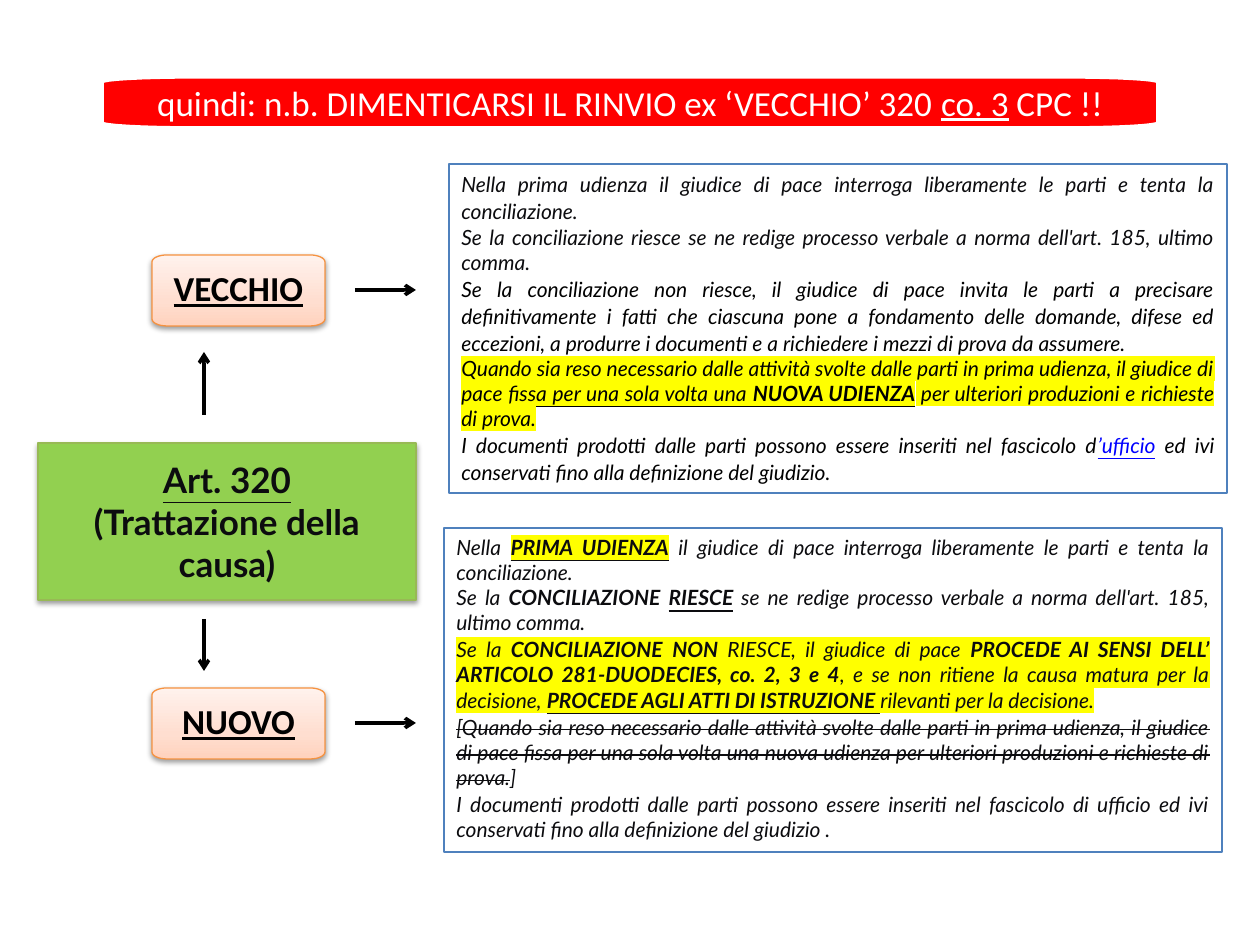
import math
from lxml import etree
from pptx import Presentation
from pptx import util as u
from pptx.dml.color import RGBColor
from pptx.enum import shapes, text
from pptx.oxml import parse_xml
from pptx.oxml.ns import qn

PX = 914400 // 126
NS = 'xmlns:a="http://schemas.openxmlformats.org/drawingml/2006/main"'
C = dict(red="FF0000", white="FFFFFF", black="000000", ink="0C0C0F", link="0000FF",
         yellow="FFFF00", blue="4F81BD", green="92D050", green_line="98B955",
         orange="F69240")
PEACH = [(0, "FFD2BD"), (35, "FFDED0"), (100, "FFF2ED")]

# Content: a run is (text, flags); b bold, i italic, u underline, s strike,
# h highlight, k black, l link colour
TITLE = [("quindi: n.b. DIMENTICARSI IL RINVIO ex ‘VECCHIO’ 320 ", ""),
         ("co. 3", "u"), (" CPC !!", "")]
ARTICLE = [("Art. 320", "bu"), ("\n", "b"), ("(Trattazione della causa)", "b")]
# A paragraph is (line spacing, points after, runs)
OLD_TEXT = [
    (1.07, 0, [("Nella prima udienza il giudice di pace interroga liberamente le parti "
                "e tenta la conciliazione.", "i")]),
    (1, 0, [("Se la conciliazione riesce se ne redige processo verbale a norma "
             "dell'art. 185, ultimo comma.", "i")]),
    (1.07, 0, [("Se la conciliazione non riesce, il giudice di pace invita le parti a "
                "precisare definitivamente i fatti che ciascuna pone a fondamento delle "
                "domande, difese ed eccezioni, a produrre i documenti e a richiedere i "
                "mezzi di prova da assumere.", "ik")]),
    (1, 0, [("Quando sia reso necessario dalle attività svolte dalle parti in prima "
             "udienza, il giudice di pace ", "ikh"),
            ("fissa per una sola volta una ", "ikhu"), ("NUOVA UDIENZA", "ikhub"),
            (" ", "ikhb"), ("per ulteriori produzioni e richieste di prova.", "ikh")]),
    (1.07, 0, [("I documenti prodotti dalle parti possono essere inseriti nel "
                "fascicolo d", "ik"), ("’ufficio", "ilu"),
               (" ed ivi conservati fino alla definizione del giudizio.", "ik")]),
]
NEW_TEXT = [
    (1, 0, [("Nella ", "i"), ("PRIMA UDIENZA", "ibuh"),
            (" il giudice di pace interroga liberamente le parti e tenta la "
             "conciliazione.", "i")]),
    (1, 1, [("Se la ", "i"), ("CONCILIAZIONE ", "ib"), ("RIESCE", "ibu"), (" ", "ib"),
            ("se ne redige processo verbale a norma dell'art. 185, ultimo comma.", "i")]),
    (1, 1, [("Se la ", "ih"), ("CONCILIAZIONE", "ihb"), (" ", "ih"), ("NON", "ihbu"),
            (" RIESCE, il giudice di pace ", "ih"),
            ("PROCEDE AI SENSI DELL’ ARTICOLO 281-DUODECIES, co. 2, 3 e 4", "ihbu"),
            (", e se non ritiene la causa matura per la decisione, ", "ih"),
            ("PROCEDE AGLI ATTI DI ISTRUZIONE ", "ihbu"),
            ("rilevanti per la decisione.", "ih")]),
    (1, 1, [("[Quando sia reso necessario dalle attività svolte dalle parti in prima "
             "udienza, il giudice di pace fissa per una sola volta una nuova udienza per "
             "ulteriori produzioni e richieste di prova.", "is"), ("]", "i")]),
    (1, 1, [("I documenti prodotti dalle parti possono essere inseriti nel fascicolo di "
             "ufficio ed ivi conservati fino alla definizione del giudizio .", "i")]),
]

# Places in pixels
TITLE_BOX = (102, 77, 1056, 51)
ARTICLE_BOX = (38, 443, 378, 157)
PANELS = [((444, 528, 778, 324), NEW_TEXT), ((449, 164, 778, 329), OLD_TEXT)]
LABELS = [("VECCHIO", 255), ("NUOVO", 688)]
LABEL_X, LABEL_W, LABEL_H = 152, 173, 71
ARROWS = [((204, 619), (204, 671)), ((204, 415), (204, 352))]
ARROWS += [((355, y + LABEL_H // 2), (416, y + LABEL_H // 2)) for _, y in LABELS]

prs = Presentation()
prs.slide_width, prs.slide_height = 1260 * PX, 945 * PX
s = prs.slides.add_slide(prs.slide_layouts[6])


def rgb(name):
    return RGBColor.from_string(C[name])


def write(sp, paragraphs, size=20, font="Calibri", color="black", align="CENTER",
          anchor="MIDDLE", inset=None, grow=False):
    tf = sp.text_frame
    tf.word_wrap = True
    tf.vertical_anchor = text.MSO_ANCHOR[anchor]
    if grow:
        tf.auto_size = text.MSO_AUTO_SIZE.SHAPE_TO_FIT_TEXT
    if inset:
        tf.margin_left = tf.margin_right = tf.margin_top = tf.margin_bottom = inset * PX
    for n, (spacing, after, runs) in enumerate(paragraphs):
        p = tf.add_paragraph() if n else tf.paragraphs[0]
        p.alignment = text.PP_ALIGN[align]
        p.line_spacing, p.space_after = spacing, u.Pt(after)
        for words, flags in runs:
            if words == "\n":
                p.add_line_break()
                continue
            r = p.add_run()
            r.text = words
            f = r.font
            f.size, f.name = u.Pt(size), font
            f.bold, f.italic, f.underline = "b" in flags, "i" in flags, "u" in flags
            f.color.rgb = rgb("link" if "l" in flags else "black" if "k" in flags else color)
            rpr = r._r.get_or_add_rPr()
            if "s" in flags:
                rpr.set("strike", "sngStrike")
            if "h" in flags:
                rpr.find(qn("a:latin")).addprevious(parse_xml(
                    f'<a:highlight {NS}><a:srgbClr val="{C["yellow"]}"/></a:highlight>'))


def paint(sp, line, width=0.75, fill=None, gradient=None, shadow=False):
    sp.fill.background()
    if fill:
        sp.fill.solid()
        sp.fill.fore_color.rgb = rgb(fill)
    sp.line.color.rgb, sp.line.width = rgb(line), u.Pt(width)
    sp.shadow.inherit = False
    pr = sp._element.spPr
    if gradient:
        stops = "".join(f'<a:gs pos="{pos * 1000}"><a:srgbClr val="{c}"/></a:gs>'
                        for pos, c in gradient)
        pr.replace(pr.find(qn("a:noFill")), parse_xml(
            f'<a:gradFill {NS} rotWithShape="1"><a:gsLst>{stops}</a:gsLst>'
            '<a:lin ang="16200000" scaled="0"/></a:gradFill>'))
    if shadow:
        pr.find(qn("a:effectLst")).append(parse_xml(
            f'<a:outerShdw {NS} blurRad="40000" dist="20000" dir="5400000" '
            f'rotWithShape="0"><a:srgbClr val="{C["black"]}"><a:alpha val="38000"/>'
            '</a:srgbClr></a:outerShdw>'))


def rect(box):
    return s.shapes.add_shape(shapes.MSO_SHAPE.RECTANGLE, *(v * PX for v in box))


def oval_corner_box(box, rx, ry, steps=8):
    x, y, w, h = box
    centers = [(x + w - rx, y + h - ry), (x + rx, y + h - ry),
               (x + rx, y + ry), (x + w - rx, y + ry)]
    pts = []
    for quarter, (cx, cy) in enumerate(centers):
        for k in range(steps + 1):
            a = (quarter + k / steps) * math.pi / 2
            pts.append((round((cx + rx * math.cos(a)) * PX),
                        round((cy + ry * math.sin(a)) * PX)))
    fb = s.shapes.build_freeform(*pts[0])
    fb.add_line_segments(pts[1:], close=True)
    return fb.convert_to_shape()


# Title
sp = oval_corner_box(TITLE_BOX, 90, 5)
paint(sp, "white", 2, fill="red")
write(sp, [(0.9, 0, TITLE)], color="white", anchor="TOP", inset=9)

# Article
sp = rect(ARTICLE_BOX)
paint(sp, "green_line", fill="green", shadow=True)
write(sp, [(1, 0, ARTICLE)], font="Lato", color="ink")

# Old and new labels
for label, y in LABELS:
    sp = oval_corner_box((LABEL_X, y, LABEL_W, LABEL_H), 15, 7)
    paint(sp, "orange", gradient=PEACH, shadow=True)
    write(sp, [(0.9, 0, [(label, "bu")])], inset=9)

# Text panels
for box, paragraphs in PANELS:
    sp = rect(box)
    paint(sp, "blue")
    write(sp, paragraphs, size=12, font="Lato", color="ink", align="JUSTIFY",
          anchor="TOP", grow=True)

# Arrows
for start, end in ARROWS:
    cn = s.shapes.add_connector(shapes.MSO_CONNECTOR.STRAIGHT,
                                *(v * PX for v in start + end))
    cn.line.color.rgb, cn.line.width = rgb("black"), u.Pt(2)
    etree.SubElement(cn.line._get_or_add_ln(), qn("a:tailEnd"), type="arrow")
    etree.SubElement(cn._element.spPr, qn("a:effectLst"))

prs.save("out.pptx")
